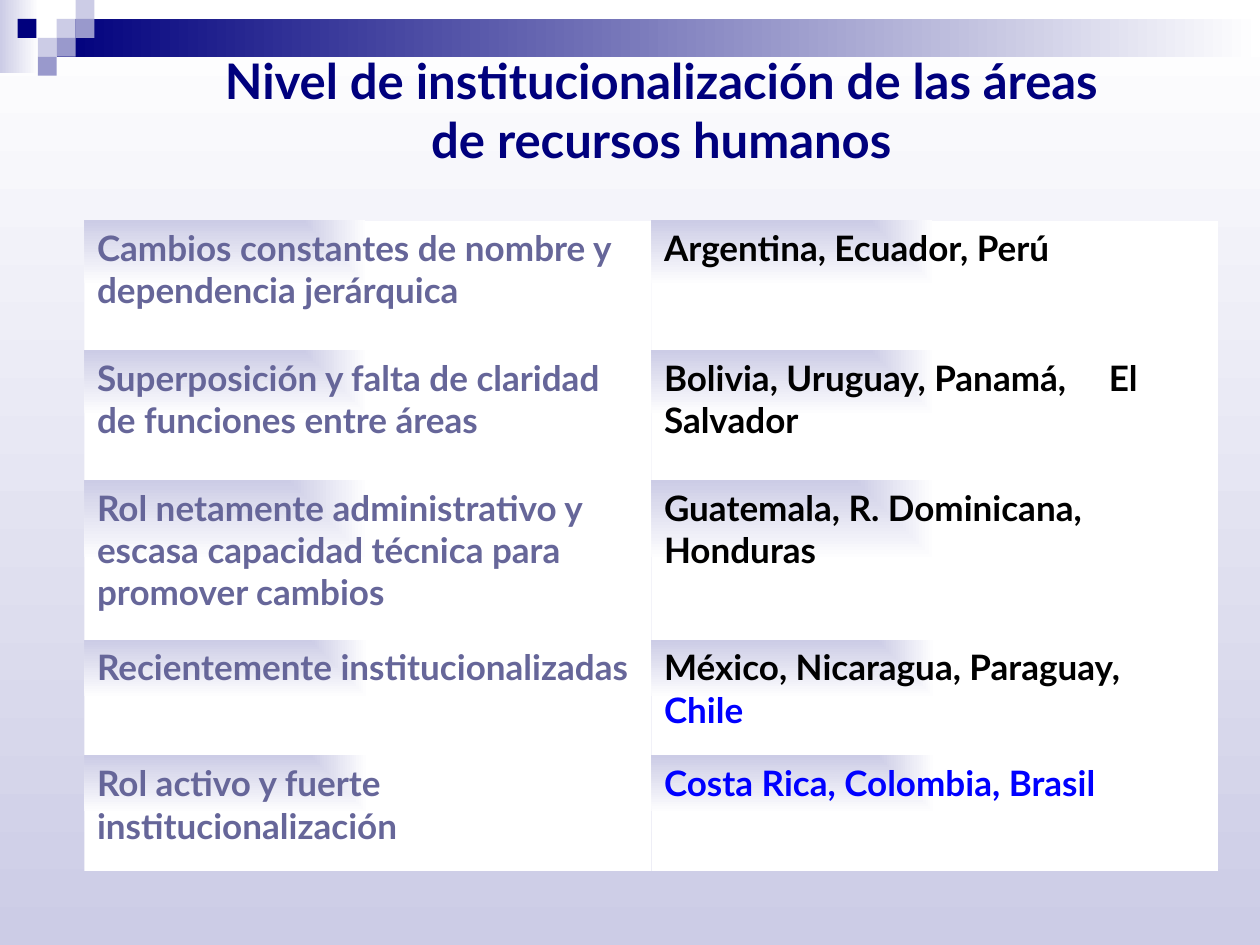
"""Build a slide on how established human resources areas are, by country."""
import pptx
import pptx.util
import pptx.dml.color
import pptx.enum.shapes
import pptx.enum.text
import pptx.oxml
import pptx.oxml.ns

Inches, Pt = pptx.util.Inches, pptx.util.Pt
RGB = pptx.dml.color.RGBColor
qn = pptx.oxml.ns.qn

NAVY = RGB(0x00, 0x00, 0x7D)
PALE = RGB(0xCC, 0xCC, 0xE6)
LILAC = RGB(0x99, 0x99, 0xCC)
SLATE = RGB(0x66, 0x66, 0x99)
WHITE = RGB(0xFF, 0xFF, 0xFF)
BLACK = RGB(0x00, 0x00, 0x00)
BLUE = RGB(0x00, 0x00, 0xFF)

TITLE = "Nivel de institucionalización de las áreas \vde recursos humanos "
ROWS = [
    (1.03, "Cambios constantes de nombre y dependencia jerárquica",
     [("Argentina, Ecuador, Perú", BLACK)]),
    (1.03, "Superposición y falta de claridad de funciones entre áreas",
     [("Bolivia, Uruguay, Panamá,\tEl Salvador", BLACK)]),
    (1.27, "Rol netamente administrativo y escasa capacidad técnica para promover cambios",
     [("Guatemala, R. Dominicana, Honduras", BLACK)]),
    (0.92, "Recientemente institucionalizadas",
     [("México, Nicaragua, Paraguay, ", BLACK), ("Chile", BLUE)]),
    (0.91, "Rol activo y fuerte institucionalización",
     [("Costa Rica, Colombia, Brasil", BLUE)]),
]
BANDS = [((0, 0, 0.31, 0.58), PALE), ((0.45, 0.15, 9.55, 0.3), NAVY)]
TILE = 0.15
TILES = [(3, 1, PALE), (4, 0, PALE), (4, 1, LILAC), (2, 2, PALE),
         (0.93, 1, NAVY), (3, 2, LILAC), (2, 3, LILAC)]
TAB = 3.53
PLAIN = "{2D5ABB26-0587-4C30-8999-92F81FD0307C}"
CORNER = ('<a:path xmlns:a="http://schemas.openxmlformats.org/drawingml/2006/main" '
          'path="rect"><a:fillToRect r="100000" b="100000"/></a:path>')
TABS = ('<a:tabLst xmlns:a="http://schemas.openxmlformats.org/drawingml/2006/main">'
        '<a:tab pos="%d" algn="l"/></a:tabLst>')


def blend(fill, first, last, angle=0):
    fill.gradient()
    fill.gradient_angle = angle
    for stop, color in zip(fill.gradient_stops, (first, last)):
        stop.color.rgb = color


def block(slide, box):
    shape = slide.shapes.add_shape(
        pptx.enum.shapes.MSO_SHAPE.RECTANGLE, *map(Inches, box))
    shape.shadow.inherit = False
    shape.line.fill.background()
    return shape


def write(para, text, size, color):
    run = para.add_run()
    run.text = text
    style = {"name": "Lato", "size": Pt(size), "bold": True}
    for key, value in style.items():
        setattr(run.font, key, value)
    run.font.color.rgb = color


def add_bands(slide):
    for box, color in BANDS:
        blend(block(slide, box).fill, color, WHITE)
    for col, row, color in TILES:
        fill = block(slide, (col * TILE, row * TILE, TILE, TILE)).fill
        fill.solid()
        fill.fore_color.rgb = color


def add_title(slide):
    box = slide.shapes.add_textbox(*map(Inches, (0.92, 0.33, 8.75, 1.08)))
    frame = box.text_frame
    frame.word_wrap = True
    frame.vertical_anchor = pptx.enum.text.MSO_ANCHOR.MIDDLE
    para = frame.paragraphs[0]
    para.alignment = pptx.enum.text.PP_ALIGN.CENTER
    for part, text in enumerate(TITLE.split("\v")):
        if part:
            para.add_line_break()
        write(para, text, 28, NAVY)


def fill_cell(cell, runs):
    blend(cell.fill, PALE, WHITE)
    line = next(cell._tc.iter(qn("a:lin")))
    line.getparent().replace(line, pptx.oxml.parse_xml(CORNER))
    para = cell.text_frame.paragraphs[0]
    for text, color in runs:
        write(para, text, 20, color)
        if "\t" in text:
            props = para._p.get_or_add_pPr()
            props.append(pptx.oxml.parse_xml(TABS % Inches(TAB)))


def add_grid(slide):
    high = sum(row[0] for row in ROWS)
    frame = slide.shapes.add_table(
        len(ROWS), 2, *map(Inches, (0.67, 1.75, 9, high)))
    table = frame.table
    table.first_row = table.horz_banding = False
    next(table._tbl.iter(qn("a:tableStyleId"))).text = PLAIN
    for idx, (tall, label, lands) in enumerate(ROWS):
        table.rows[idx].height = Inches(tall)
        for col, runs in enumerate(([(label, SLATE)], lands)):
            fill_cell(table.cell(idx, col), runs)


def main():
    deck = pptx.Presentation()
    deck.slide_width, deck.slide_height = Inches(10), Inches(7.5)
    slide = deck.slides.add_slide(deck.slide_layouts[6])
    blend(slide.background.fill, WHITE, PALE, 270)
    add_bands(slide)
    add_title(slide)
    add_grid(slide)
    deck.save("out.pptx")


if __name__ == "__main__":
    main()
